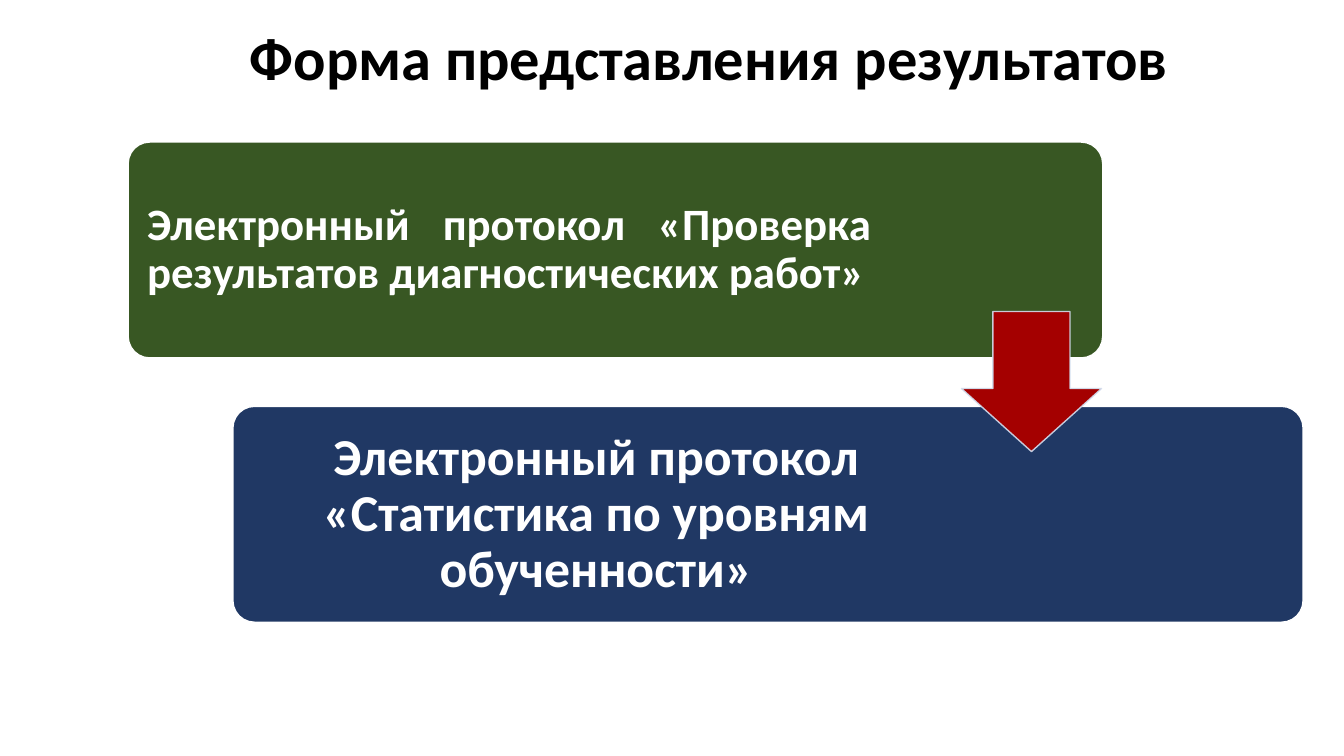
"""Build the slide on the form in which results are presented."""
from dataclasses import dataclass

from lxml.etree import SubElement
from pptx import Presentation
from pptx.dml.color import RGBColor
from pptx.enum.shapes import MSO_SHAPE
from pptx.enum.text import MSO_ANCHOR, PP_ALIGN
from pptx.oxml.ns import qn
from pptx.shapes.autoshape import Shape
from pptx.slide import Slide
from pptx.util import Cm, Pt

PAD = 0.15


@dataclass(frozen=True)
class Area:
    left: float
    top: float
    width: float
    height: float

    def cm(self) -> tuple[Cm, Cm, Cm, Cm]:
        return Cm(self.left), Cm(self.top), Cm(self.width), Cm(self.height)


@dataclass(frozen=True)
class Label:
    text: str
    size: float
    align: PP_ALIGN
    inset: float
    color: str


@dataclass(frozen=True)
class Step:
    area: Area
    fill: str
    width: float
    label: Label


TITLE = Label("Форма представления результатов", 43.2, PP_ALIGN.CENTER, 0.13, "000000")
STEPS = [
    Step(Area(3.23, 3.58, 24.56, 5.44), "385723", 18.92,
         Label("Электронный протокол «Проверка результатов диагностических работ»",
               32, PP_ALIGN.JUSTIFY, 0.33, "FFFFFF")),
    Step(Area(5.87, 10.24, 26.97, 5.44), "203864", 18.01,
         Label("Электронный протокол «Статистика по уровням обученности»",
               37, PP_ALIGN.CENTER, 0.38, "FFFFFF")),
]


def color(code: str) -> RGBColor:
    return RGBColor.from_string(code)


def add_label(slide: Slide, area: Area, label: Label) -> None:
    frame = slide.shapes.add_textbox(*area.cm()).text_frame
    frame.word_wrap = True
    frame.vertical_anchor = MSO_ANCHOR.MIDDLE
    frame.margin_left = frame.margin_right = Cm(label.inset)
    frame.margin_top = frame.margin_bottom = Cm(label.inset)
    para = frame.paragraphs[0]
    para.text = label.text
    para.alignment = label.align
    para.line_spacing = 0.9
    para.font.name = "Calibri"
    para.font.size = Pt(label.size)
    para.font.bold = True
    para.font.color.rgb = color(label.color)


def add_form(slide: Slide, kind: MSO_SHAPE, area: Area, fill: str, line: str,
             ratios: list[float]) -> Shape:
    shape = slide.shapes.add_shape(kind, *area.cm())
    shape.shadow.inherit = False
    shape.fill.solid()
    shape.fill.fore_color.rgb = color(fill)
    shape.line.color.rgb = color(line)
    shape.line.width = Pt(1)
    for index, ratio in enumerate(ratios):
        shape.adjustments[index] = ratio
    return shape


def add_step(slide: Slide, step: Step) -> None:
    box = step.area
    add_form(slide, MSO_SHAPE.ROUNDED_RECTANGLE, box, step.fill, "FFFFFF", [0.1])
    inner = Area(box.left + PAD, box.top + PAD, step.width, box.height - 2 * PAD)
    add_label(slide, inner, step.label)


def add_arrow(slide: Slide, area: Area) -> None:
    arrow = add_form(slide, MSO_SHAPE.DOWN_ARROW, area, "A40000", "D2DEEF", [0.55, 0.45])
    tint = arrow.line.fill.fore_color
    tint.rgb = color("D2DEEF")
    stroke = arrow.element.spPr.find(qn("a:ln")).find(".//" + qn("a:srgbClr"))
    SubElement(stroke, qn("a:alpha"), val="90000")


def main() -> None:
    deck = Presentation()
    deck.slide_width, deck.slide_height = Cm(33.87), Cm(19.05)
    slide = deck.slides.add_slide(deck.slide_layouts[6])
    add_label(slide, Area(3.78, 0.69, 28.19, 1.68), TITLE)
    for step in STEPS:
        add_step(slide, step)
    add_arrow(slide, Area(24.23, 7.85, 3.53, 3.53))
    deck.save("out.pptx")


if __name__ == "__main__":
    main()
